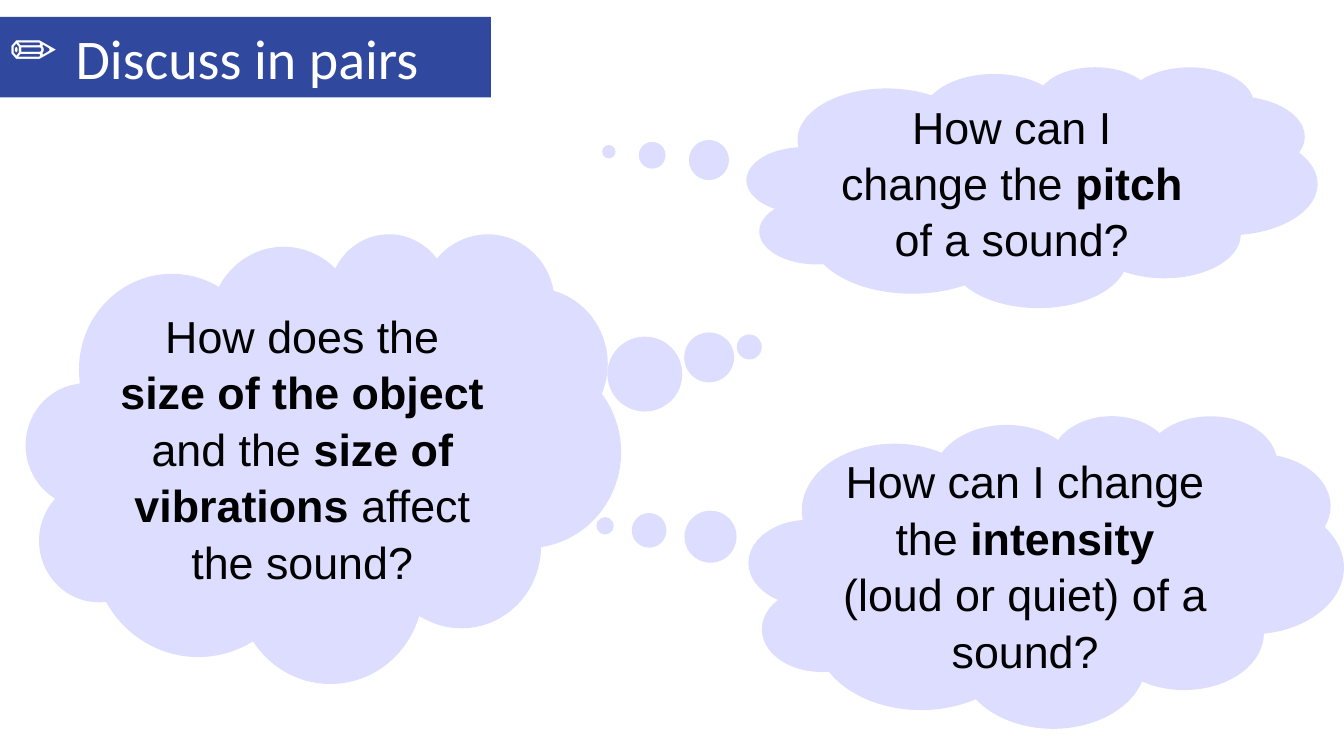
from dataclasses import dataclass

from lxml.etree import SubElement
from pptx import Presentation
from pptx.dml.color import RGBColor
from pptx.enum.shapes import MSO_SHAPE
from pptx.enum.text import MSO_ANCHOR, MSO_AUTO_SIZE, PP_ALIGN
from pptx.oxml.ns import qn
from pptx.util import Pt


@dataclass(frozen=True)
class Theme:
    banner: RGBColor = RGBColor(0x31, 0x48, 0x9F)
    cloud: RGBColor = RGBColor(0xDD, 0xDD, 0xFF)
    banner_text: RGBColor = RGBColor(0xFF, 0xFF, 0xFF)
    cloud_text: RGBColor = RGBColor(0, 0, 0)
    banner_font: str = "Calibri"
    cloud_font: str = "Arial"
    banner_size: int = 40
    cloud_size: int = 32


THEME = Theme()


def add_text(paragraph, text, *, font, size, color, bold=False):
    run = paragraph.add_run()
    run.text = text
    run.font.name = font
    run.font.size = Pt(size)
    run.font.color.rgb = color
    run.font.bold = bold


def set_bullet(paragraph, symbol, indent):
    properties = paragraph._p.get_or_add_pPr()
    properties.set("marL", str(Pt(indent)))
    properties.set("indent", str(-Pt(indent)))
    SubElement(properties, qn("a:buChar"), char=symbol)


def format_banner(banner, text, symbol):
    banner.left, banner.top = Pt(0), Pt(12)
    banner.width, banner.height = Pt(350.64), Pt(57.6)
    banner.fill.solid()
    banner.fill.fore_color.rgb = THEME.banner
    frame = banner.text_frame
    frame.auto_size = MSO_AUTO_SIZE.NONE
    frame.vertical_anchor = MSO_ANCHOR.MIDDLE
    heading = frame.paragraphs[0]
    heading.alignment = PP_ALIGN.LEFT
    set_bullet(heading, symbol, 46.8)
    add_text(heading, text, font=THEME.banner_font, size=THEME.banner_size,
             color=THEME.banner_text)


def add_thought(slide, box, tail, parts):
    """Add a thought cloud; every second part of its question is bold."""
    cloud = slide.shapes.add_shape(MSO_SHAPE.CLOUD_CALLOUT, *map(Pt, box))
    cloud.adjustments[0], cloud.adjustments[1] = tail
    cloud.shadow.inherit = False
    cloud.fill.solid()
    cloud.fill.fore_color.rgb = THEME.cloud
    cloud.line.fill.background()
    frame = cloud.text_frame
    frame.word_wrap = True
    frame.vertical_anchor = MSO_ANCHOR.MIDDLE
    question = frame.paragraphs[0]
    question.alignment = PP_ALIGN.CENTER
    question.line_spacing = 1.05
    for index, part in enumerate(parts):
        add_text(question, part, font=THEME.cloud_font, size=THEME.cloud_size,
                 color=THEME.cloud_text, bold=index % 2 == 1)


def main():
    presentation = Presentation()
    presentation.slide_width, presentation.slide_height = Pt(960), Pt(540)
    slide = presentation.slides.add_slide(presentation.slide_layouts[5])

    # Heading banner
    format_banner(slide.shapes.title, "Discuss in pairs", "✏")

    # Questions on the right, then the one on the left
    left_tail, right_tail = (-0.742, -0.146), (0.716, -0.246)
    add_thought(slide, (533.5, 47.5, 407.5, 172), left_tail,
                ["How can I change the ", "pitch", " of a sound?"])
    add_thought(slide, (535, 296.6, 424.8, 223.2), left_tail,
                ["How can I change the ", "intensity",
                 " (loud or quiet) of a sound?"])
    add_thought(slide, (18.7, 166.3, 424.8, 321.1), right_tail,
                ["How does the ", "size of the object ", "and the ",
                 "size of vibrations ", "affect the sound?"])

    presentation.save("out.pptx")


if __name__ == "__main__":
    main()
